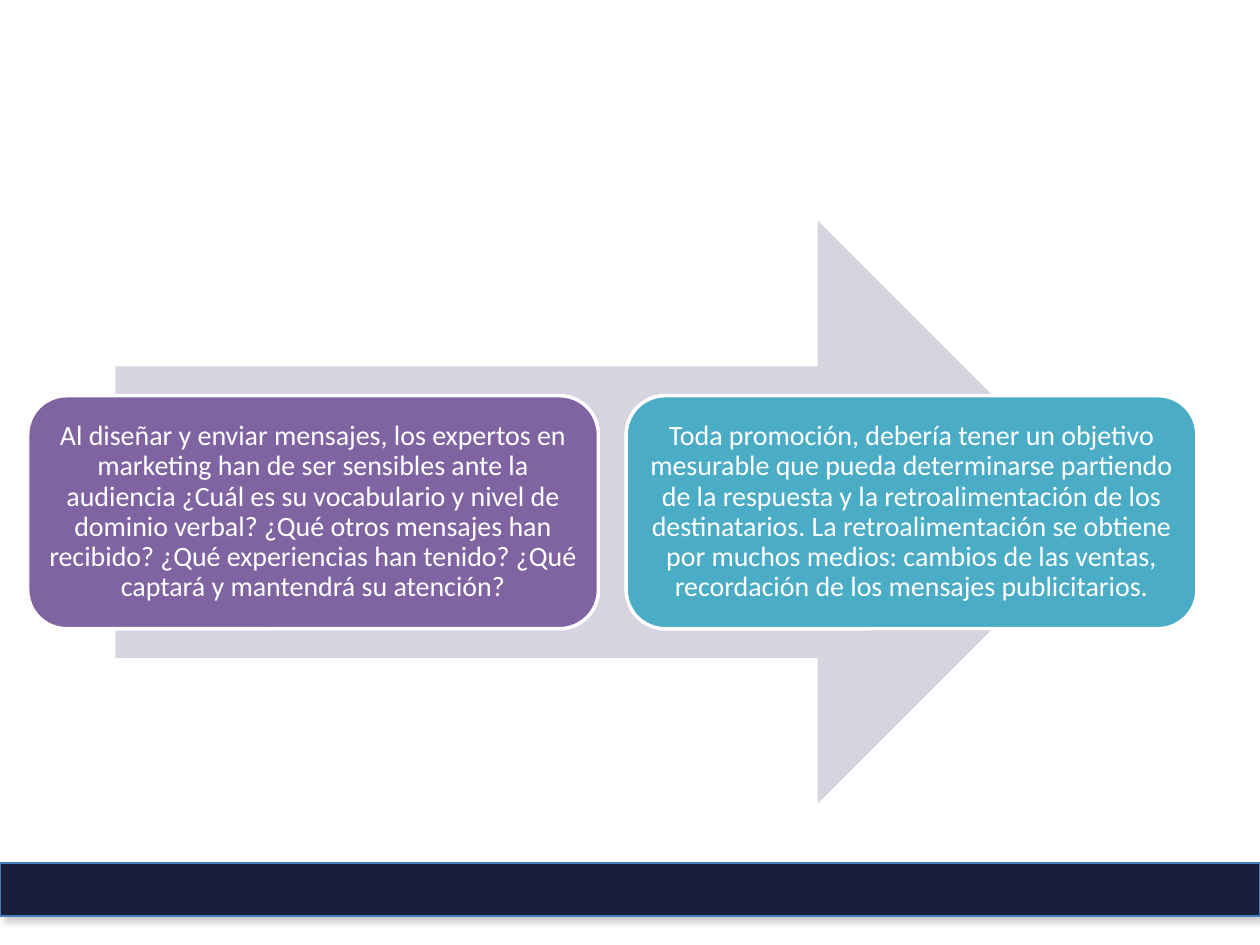
from dataclasses import dataclass

from lxml import etree
from pptx import Presentation
from pptx.dml.color import RGBColor
from pptx.enum.shapes import MSO_SHAPE as Shape
from pptx.enum.text import MSO_ANCHOR, PP_ALIGN
from pptx.oxml.ns import qn
from pptx.util import Inches, Pt


@dataclass(frozen=True)
class Theme:
    arrow: str = "D8D3E0"
    purple: str = "8064A2"
    teal: str = "4BACC6"
    white: str = "FFFFFF"
    footer: str = "191E3C"
    footer_line: str = "4A7EBB"
    shadow: str = "808080"
    font: str = "Calibri"
    body: int = 16


THEME = Theme()
CARDS = [
    (THEME.purple,
     "Al diseñar y enviar mensajes, los expertos en marketing han de ser "
     "sensibles ante la audiencia ¿Cuál es su vocabulario y nivel de dominio "
     "verbal? ¿Qué otros mensajes han recibido? ¿Qué experiencias han tenido? "
     "¿Qué captará y mantendrá su atención?"),
    (THEME.teal,
     "Toda promoción, debería tener un objetivo mesurable que pueda "
     "determinarse partiendo de la respuesta y la retroalimentación de los "
     "destinatarios. La retroalimentación se obtiene por muchos medios: "
     "cambios de las ventas, recordación de los mensajes publicitarios."),
]


def add_box(s, kind, box, fill, line=None, width=0):
    sp = s.shapes.add_shape(kind, *map(Inches, box))
    sp.shadow.inherit = False
    sp.fill.solid()
    sp.fill.fore_color.rgb = RGBColor.from_string(fill)
    if line:
        sp.line.color.rgb = RGBColor.from_string(line)
        sp.line.width = Pt(width)
    else:
        sp.line.fill.background()
    return sp


def add_card(s, box, fill, text):
    sp = add_box(s, Shape.ROUNDED_RECTANGLE, box, fill, THEME.white, 2)
    tf = sp.text_frame
    tf.word_wrap = True
    tf.vertical_anchor = MSO_ANCHOR.MIDDLE
    tf.margin_left = tf.margin_right = Inches(0.07)
    tf.margin_top = tf.margin_bottom = Inches(0.07)
    p = tf.paragraphs[0]
    p.alignment = PP_ALIGN.CENTER
    p.line_spacing = 0.9
    r = p.add_run()
    r.text = text
    r.font.name = THEME.font
    r.font.size = Pt(THEME.body)
    r.font.color.rgb = RGBColor.from_string(THEME.white)


def add_process(s, box, gap=0.22, card_height=1.85):
    """Wide arrow behind a row of equal cards centred on its height."""
    left, top, width, height = box
    arrow_width = 0.85 * width
    add_box(s, Shape.RIGHT_ARROW,
            (left + (width - arrow_width) / 2, top, arrow_width, height),
            THEME.arrow)
    card_width = (width - gap * (len(CARDS) - 1)) / len(CARDS)
    card_top = top + (height - card_height) / 2
    for i, (fill, text) in enumerate(CARDS):
        x = left + i * (card_width + gap)
        add_card(s, (x, card_top, card_width, card_height), fill, text)


def add_footer(s, box):
    sp = add_box(s, Shape.RECTANGLE, box, THEME.footer, THEME.footer_line, 0.75)
    effects = sp._element.spPr.find(qn("a:effectLst"))
    shadow = etree.SubElement(
        effects, qn("a:outerShdw"), blurRad=str(Pt(4)), dist=str(Pt(3)),
        dir=str(45 * 60000), algn="tl", rotWithShape="0")
    color = etree.SubElement(shadow, qn("a:srgbClr"), val=THEME.shadow)
    etree.SubElement(color, qn("a:alpha"), val="40000")


def main():
    prs = Presentation()
    prs.slide_width, prs.slide_height = Inches(10), Inches(7.5)
    s = prs.slides.add_slide(prs.slide_layouts[6])
    add_process(s, (0.22, 1.75, 9.28, 4.63))
    add_footer(s, (0, 6.85, 10, 0.42))
    prs.save("out.pptx")


if __name__ == "__main__":
    main()
